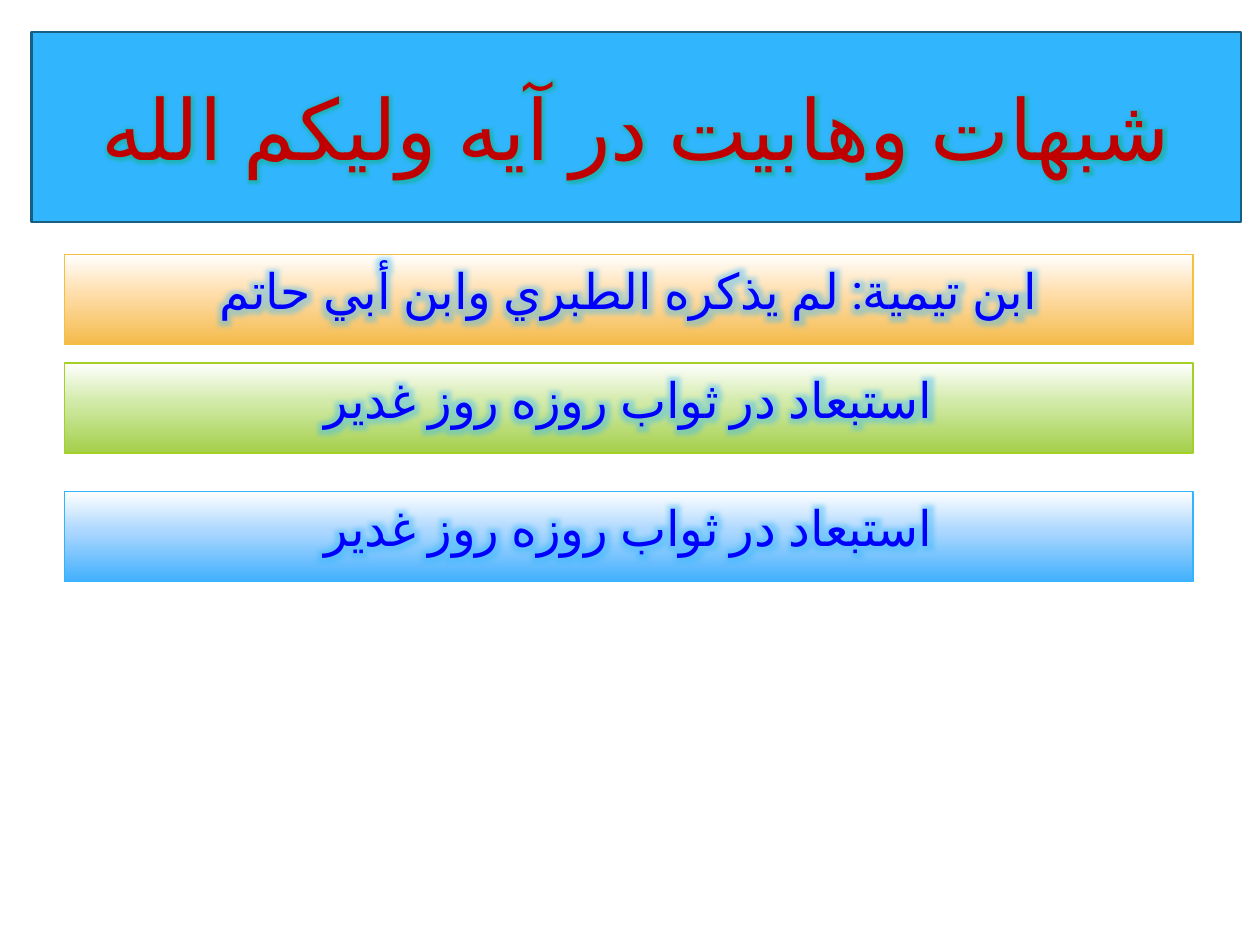
from copy import deepcopy

from lxml import etree
from pptx import Presentation
from pptx.dml.color import RGBColor
from pptx.enum import lang, shapes, text
from pptx.oxml import ns
from pptx.util import Pt

FONT = "Roboto"
COLORS = {"title_fill": "31B6FD", "title_line": "195F84", "title_text": "C00000",
          "title_glow": "00B050", "bar_text": "0000FF", "bar_glow": "31B6FD"}

TITLE = "شبهات وهابيت در آيه وليكم الله"
# Text, top, line colour, gradient from top to bottom
BARS = [
    ("ابن تيمية: لم يذكره الطبري وابن أبي حاتم", 145.4, "F5C040",
     ("FFFFFF", "FFDDAA", "F4BB4A")),
    ("استبعاد در ثواب روزه روز غدير", 207.4, "A5D028",
     ("FFFFFF", "D1EAA7", "A4CF4A")),
    ("استبعاد در ثواب روزه روز غدير", 280.8, "31B6FD",
     ("FFFFFF", "ACD7FF", "42B0FD")),
]
STOPS = (0, 0.44, 1)
BAR_LEFT, BAR_WIDTH, BAR_HEIGHT = 36.7, 645.1, 51.5


def rgb(value):
    return RGBColor.from_string(value)


def write(shape, words, size, color, glow, radius, anchor, before=0):
    frame = shape.text_frame
    frame.word_wrap = True
    frame.auto_size = text.MSO_AUTO_SIZE.NONE
    frame.vertical_anchor = anchor
    para = frame.paragraphs[0]
    para.alignment = text.PP_ALIGN.CENTER
    para.space_before = Pt(before)
    para._p.get_or_add_pPr().set("rtl", "1")
    span = para.add_run()
    span.text = words
    span.font.size = Pt(size)
    span.font.name = FONT
    span.font.language_id = lang.MSO_LANGUAGE_ID.FARSI
    span.font.color.rgb = rgb(color)
    # Soft glow and the complex-script font
    props = span._r.get_or_add_rPr()
    effects = etree.Element(ns.qn("a:effectLst"))
    halo = etree.SubElement(effects, ns.qn("a:glow"), rad=str(Pt(radius)))
    tint = etree.SubElement(halo, ns.qn("a:srgbClr"), val=glow)
    etree.SubElement(tint, ns.qn("a:alpha"), val="40000")
    props.find(ns.qn("a:solidFill")).addnext(effects)
    etree.SubElement(props, ns.qn("a:cs"), typeface=FONT)


def outline(shape, color, width):
    shape.line.color.rgb = rgb(color)
    shape.line.width = Pt(width)


def fill_gradient(shape, colors):
    shape.fill.gradient()
    shape.fill.gradient_angle = 270
    stop_list = shape.fill._xPr.find(ns.qn("a:gradFill")).find(ns.qn("a:gsLst"))
    stop_list.append(deepcopy(stop_list[-1]))
    for stop, position, color in zip(shape.fill.gradient_stops, STOPS, colors):
        stop.position = position
        stop.color.rgb = rgb(color)


deck = Presentation()
deck.slide_width, deck.slide_height = Pt(720), Pt(540)
page = deck.slides.add_slide(deck.slide_layouts[5])

# Title banner
title = page.shapes.title
title.left, title.top, title.width, title.height = Pt(18), Pt(18.5), Pt(691.2), Pt(108.3)
title.fill.solid()
title.fill.fore_color.rgb = rgb(COLORS["title_fill"])
outline(title, COLORS["title_line"], 1.25)
write(title, TITLE, 48, COLORS["title_text"], COLORS["title_glow"], 4,
      text.MSO_ANCHOR.MIDDLE)

# Gradient bars
for words, top, line_color, gradient in BARS:
    bar = page.shapes.add_shape(shapes.MSO_SHAPE.RECTANGLE, Pt(BAR_LEFT), Pt(top),
                                Pt(BAR_WIDTH), Pt(BAR_HEIGHT))
    bar.shadow.inherit = False
    fill_gradient(bar, gradient)
    outline(bar, line_color, 0.75)
    write(bar, words, 28, COLORS["bar_text"], COLORS["bar_glow"], 14,
          text.MSO_ANCHOR.TOP, before=5.6)

deck.save("out.pptx")
